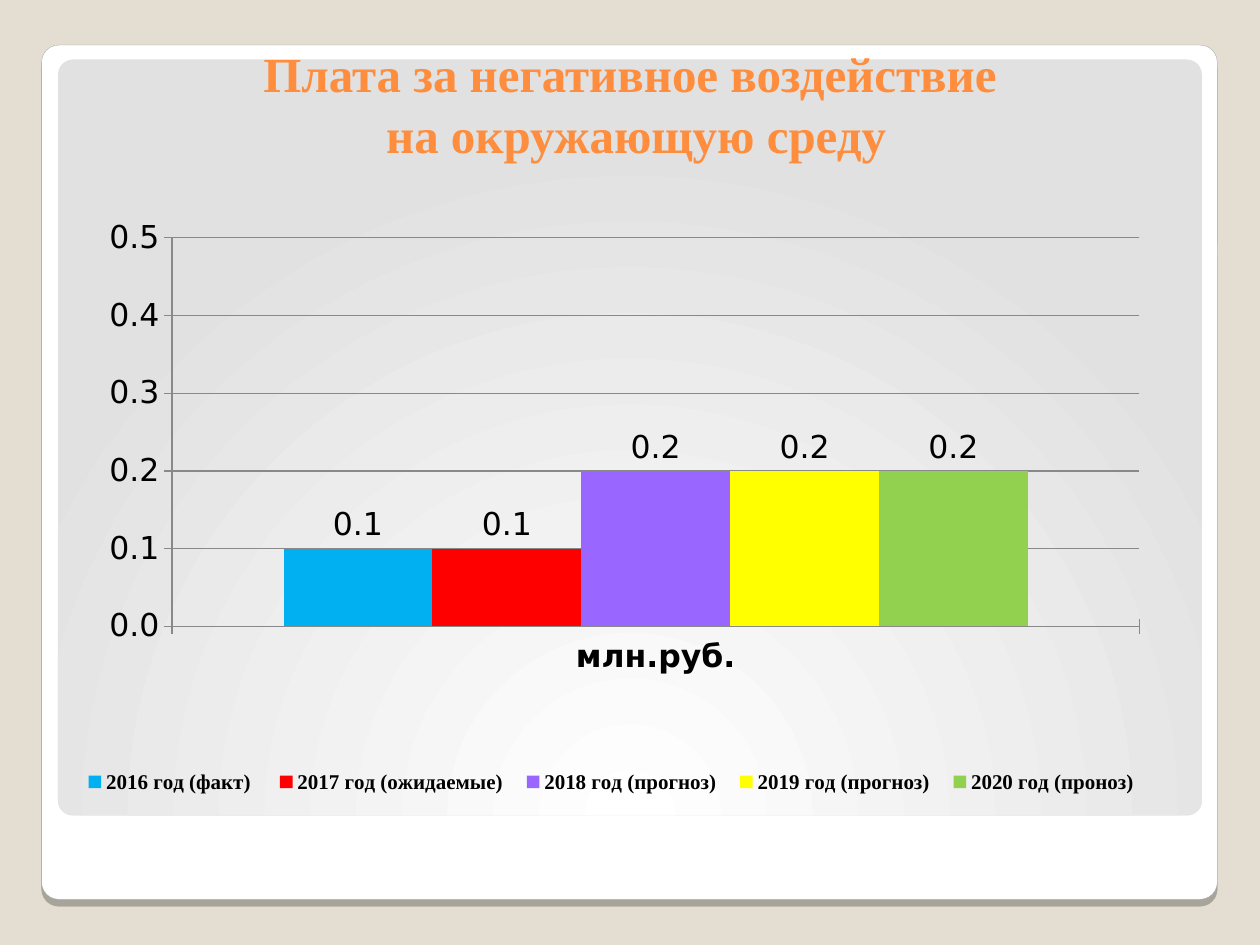
import pptx
import pptx.chart.data
import pptx.dml.color
import pptx.enum.chart
import pptx.enum.shapes
import pptx.enum.text
import pptx.oxml
import pptx.oxml.ns
import pptx.util
from pptx.util import Cm

DRAWING = 'xmlns:a="http://schemas.openxmlformats.org/drawingml/2006/main"'
CHART = 'xmlns:c="http://schemas.openxmlformats.org/drawingml/2006/chart"'
BLACK = "000000"
AXIS_GREY = "898989"
YEARS = [
    ("2016 год (факт) ", 0.1, "00B0F0"),
    ("2017 год (ожидаемые)", 0.1, "FF0000"),
    ("2018 год (прогноз)", 0.2, "9966FF"),
    ("2019 год (прогноз)", 0.2, "FFFF00"),
    ("2020 год (проноз)", 0.2, "92D050"),
]


def color(hex_code):
    return pptx.dml.color.RGBColor.from_string(hex_code)


def paint(fill, hex_code):
    fill.solid()
    fill.fore_color.rgb = color(hex_code)


def style_font(font, name, size, hex_code=BLACK, bold=False):
    font.name = name
    font.size = pptx.util.Pt(size)
    font.bold = bold
    font.color.rgb = color(hex_code)


def style_line(line, hex_code, width):
    line.color.rgb = color(hex_code)
    line.width = pptx.util.Pt(width)


def add_panel(slide, left, top, width, height):
    panel = slide.shapes.add_shape(
        pptx.enum.shapes.MSO_SHAPE.ROUNDED_RECTANGLE,
        Cm(left), Cm(top), Cm(width), Cm(height))
    panel.adjustments[0] = 0.02
    panel.shadow.inherit = False
    return panel


def add_drop_shadow(panel):
    effects = panel._element.spPr.find(pptx.oxml.ns.qn("a:effectLst"))
    effects.append(pptx.oxml.parse_xml(
        f'<a:outerShdw {DRAWING} blurRad="0" dist="{pptx.util.Pt(4)}" dir="5400000" '
        'algn="tl" rotWithShape="0"><a:srgbClr val="000000"><a:alpha val="25000"/>'
        '</a:srgbClr></a:outerShdw>'))


def fill_with_glow(panel, inner, outer):
    panel.fill.background()
    properties = panel._element.spPr
    empty_fill = properties.find(pptx.oxml.ns.qn("a:noFill"))
    properties.replace(empty_fill, pptx.oxml.parse_xml(
        f'<a:gradFill {DRAWING} rotWithShape="1"><a:gsLst>'
        f'<a:gs pos="0"><a:srgbClr val="{inner}"/></a:gs>'
        f'<a:gs pos="100000"><a:srgbClr val="{outer}"/></a:gs></a:gsLst>'
        '<a:path path="circle"><a:fillToRect l="50000" t="175000" r="50000" b="-75000"/>'
        '</a:path></a:gradFill>'))


def add_title(slide, wording):
    title = slide.shapes.add_textbox(Cm(0), Cm(1), Cm(25.4), Cm(2.38))
    frame = title.text_frame
    frame.word_wrap = True
    frame.vertical_anchor = pptx.enum.text.MSO_ANCHOR.BOTTOM
    frame.margin_top = frame.margin_bottom = Cm(0.08)
    frame.text = wording
    heading = frame.paragraphs[0]
    heading.alignment = pptx.enum.text.PP_ALIGN.CENTER
    heading.line_spacing = 1.05
    style_font(heading.font, "Times New Roman", 28, "FF8D3E", True)


def place(part, index, left, top, width, height, target=""):
    for layout in part.findall(pptx.oxml.ns.qn("c:layout")):
        part.remove(layout)
    part.insert(index, pptx.oxml.parse_xml(
        f'<c:layout {CHART}><c:manualLayout>{target}'
        '<c:xMode val="edge"/><c:yMode val="edge"/>'
        f'<c:x val="{left}"/><c:y val="{top}"/><c:w val="{width}"/><c:h val="{height}"/>'
        '</c:manualLayout></c:layout>'))


def style_axis(axis, bold=False):
    axis.major_tick_mark = pptx.enum.chart.XL_TICK_MARK.CROSS
    axis.minor_tick_mark = pptx.enum.chart.XL_TICK_MARK.NONE
    style_font(axis.tick_labels.font, "DejaVu Sans", 18, bold=bold)
    style_line(axis.format.line, AXIS_GREY, 0.75)


def style_series(series, hex_code):
    paint(series.format.fill, hex_code)
    series.invert_if_negative = False
    labels = series.data_labels
    labels.show_value = True
    labels.number_format = "0.0"
    labels.number_format_is_linked = False
    labels.position = pptx.enum.chart.XL_LABEL_POSITION.OUTSIDE_END
    style_font(labels.font, "DejaVu Sans", 18)


def add_payment_chart(slide):
    payments = pptx.chart.data.CategoryChartData(number_format="0.0")
    payments.categories = ["млн.руб."]
    for year, amount, _ in YEARS:
        payments.add_series(year, [amount])
    chart = slide.shapes.add_chart(
        pptx.enum.chart.XL_CHART_TYPE.COLUMN_CLUSTERED,
        Cm(1), Cm(2.6), Cm(22.42), Cm(15.67), payments).chart
    chart.has_title = False
    style_font(chart.font, "DejaVu Sans", 18)

    columns = chart.plots[0]
    columns.gap_width = 150
    columns.overlap = 0
    columns.vary_by_categories = False
    for series, (_, _, hex_code) in zip(columns.series, YEARS):
        style_series(series, hex_code)

    style_axis(chart.category_axis, bold=True)
    amounts = chart.value_axis
    style_axis(amounts)
    amounts.minimum_scale = 0
    amounts.maximum_scale = 0.5
    amounts.major_unit = 0.1
    amounts.tick_labels.number_format = "0.0"
    amounts.tick_labels.number_format_is_linked = False
    style_line(amounts.major_gridlines.format.line, AXIS_GREY, 0.75)

    chart.has_legend = True
    chart.legend.position = pptx.enum.chart.XL_LEGEND_POSITION.RIGHT
    chart.legend.include_in_layout = False
    style_font(chart.legend.font, "Times New Roman", 12, bold=True)
    place(chart.legend._element, 1, 0.02, 0.81, 0.97, 0.06)
    plot_area = chart._chartSpace.chart.plotArea
    place(plot_area, 0, 0.11, 0.14, 0.87, 0.5, '<c:layoutTarget val="inner"/>')


def main():
    deck = pptx.Presentation()
    deck.slide_width, deck.slide_height = Cm(25.4), Cm(19.05)
    slide = deck.slides.add_slide(deck.slide_layouts[6])
    paint(slide.background.fill, "E3DED1")

    card = add_panel(slide, 0.84, 0.91, 23.7, 17.22)
    paint(card.fill, "FFFFFF")
    style_line(card.line, "A4A3A3", 0.16)
    add_drop_shadow(card)

    backdrop = add_panel(slide, 1.17, 1.2, 23.06, 15.24)
    fill_with_glow(backdrop, "FFFFFF", "E1E1E1")
    backdrop.line.fill.background()

    add_title(slide, "Плата за негативное воздействие\v на окружающую среду")
    add_payment_chart(slide)
    deck.save("out.pptx")


if __name__ == "__main__":
    main()
